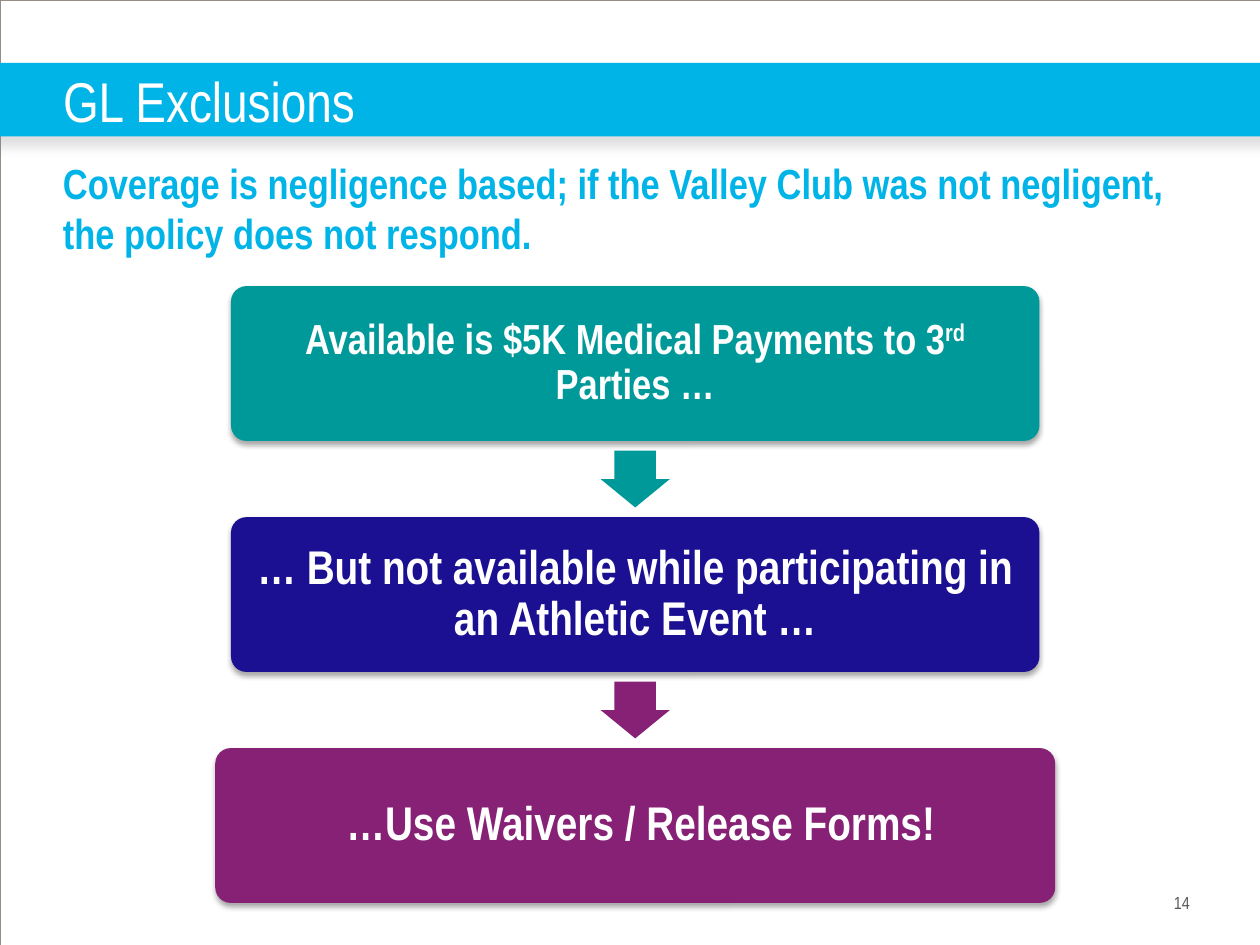
"""Build the GL Exclusions slide: a title band, a lead sentence and three linked steps."""
from dataclasses import dataclass

from lxml.etree import SubElement
from pptx import Presentation
from pptx.dml.color import RGBColor
from pptx.enum.shapes import MSO_SHAPE as Shape
from pptx.enum.text import MSO_ANCHOR as Anchor, PP_ALIGN as Align
from pptx.oxml.ns import qn
from pptx.util import Inches, Pt


@dataclass(frozen=True)
class Theme:
    font: str = "Arial Narrow"
    sky: str = "01B4E7"
    teal: str = "009999"
    navy: str = "1B1091"
    plum: str = "872175"
    white: str = "FFFFFF"
    grey: str = "58585A"
    frame: str = "958D85"
    title: int = 32
    lead: int = 24
    step: int = 27
    number: int = 10


def write(shape, text, size, color, bold=False, align=Align.LEFT, anchor=Anchor.TOP,
          inset=0, spacing=None, raised=None):
    frame = shape.text_frame
    frame.word_wrap = True
    frame.vertical_anchor = anchor
    frame.margin_left = frame.margin_right = Inches(inset)
    frame.margin_top = frame.margin_bottom = Inches(inset)
    para = frame.paragraphs[0]
    para.alignment = align
    para.line_spacing = spacing
    before, mark, after = text.partition(raised) if raised else (text, "", "")
    for part in filter(None, (before, mark, after)):
        span = para.add_run()
        span.text = part
        span.font.name = theme.font
        span.font.size = Pt(size)
        span.font.bold = bold
        span.font.color.rgb = RGBColor.from_string(color)
        if part == raised:
            span.font._element.set("baseline", "30000")


def paint(shape, fill, shadow=None):
    shape.shadow.inherit = False
    shape.fill.solid()
    shape.fill.fore_color.rgb = RGBColor.from_string(fill)
    shape.line.fill.background()
    if shadow:
        color, alpha, blur, distance = shadow
        effects = shape._element.spPr.find(qn("a:effectLst"))
        outer = SubElement(effects, qn("a:outerShdw"), blurRad=str(Pt(blur)),
                           dist=str(Pt(distance)), dir="5400000", algn="t", rotWithShape="0")
        tint = SubElement(outer, qn("a:srgbClr"), val=color)
        SubElement(tint, qn("a:alpha"), val=str(alpha * 1000))


theme = Theme()
deck = Presentation()
deck.slide_width, deck.slide_height = Inches(10), Inches(7.5)
col, row = deck.slide_width / 120, deck.slide_height / 90
page = deck.slides.add_slide(deck.slide_layouts[5])
shapes = page.shapes

border = shapes.add_shape(Shape.RECTANGLE, 0, 0, deck.slide_width, deck.slide_height)
border.shadow.inherit = False
border.fill.background()
border.line.color.rgb = RGBColor.from_string(theme.frame)
border.line.width = Pt(0.13)

band = shapes.add_shape(Shape.RECTANGLE, int(-col), int(6 * row), int(122 * col), int(7 * row))
paint(band, theme.sky, shadow=("808080", 25, 7, 4.8))

title = shapes.title
title.left, title.top = int(6 * col), int(6 * row)
title.width, title.height = int(80 * col), int(7 * row)
write(title, "GL Exclusions", theme.title, theme.white, anchor=Anchor.MIDDLE)
shapes._spTree.append(title._element)

lead = shapes.add_textbox(int(6 * col), int(15 * row), int(109 * col), int(10 * row))
write(lead, "Coverage is negligence based; if the Valley Club was not negligent, "
      "the policy does not respond.", theme.lead, theme.sky, bold=True)

number = shapes.add_textbox(int(93 * col), int(85 * row), int(20.3 * col), int(2 * row))
write(number, "14", theme.number, theme.grey, align=Align.RIGHT)

steps = [
    ("Available is $5K Medical Payments to 3rd Parties …", theme.teal, 77, theme.lead, 0.1, "rd"),
    ("… But not available while participating in an Athletic Event …",
     theme.navy, 77, theme.step, 0.11, None),
    (" …Use Waivers / Release Forms!", theme.plum, 80, theme.step, 0.11, None),
]
center, first, pitch, height = 60.5, 27.25, 22, 14.75
for index, (text, color, width, size, inset, raised) in enumerate(steps):
    top = first + index * pitch
    box = shapes.add_shape(Shape.ROUNDED_RECTANGLE, int((center - width / 2) * col),
                           int(top * row), int(width * col), int(height * row))
    box.adjustments[0] = 0.1
    paint(box, color, shadow=("000000", 35, 3.1, 1.8))
    write(box, text, size, theme.white, bold=True, align=Align.CENTER,
          anchor=Anchor.MIDDLE, inset=inset, spacing=0.9, raised=raised)

arrow_width, arrow_height = 6.6, 5.4
for index, color in enumerate((theme.teal, theme.plum)):
    gap_middle = first + index * pitch + (height + pitch) / 2
    arrow = shapes.add_shape(Shape.DOWN_ARROW, int((center - arrow_width / 2) * col),
                             int((gap_middle - arrow_height / 2) * row),
                             int(arrow_width * col), int(arrow_height * row))
    arrow.adjustments[0], arrow.adjustments[1] = 0.6, 0.5
    paint(arrow, color)

deck.save("out.pptx")
